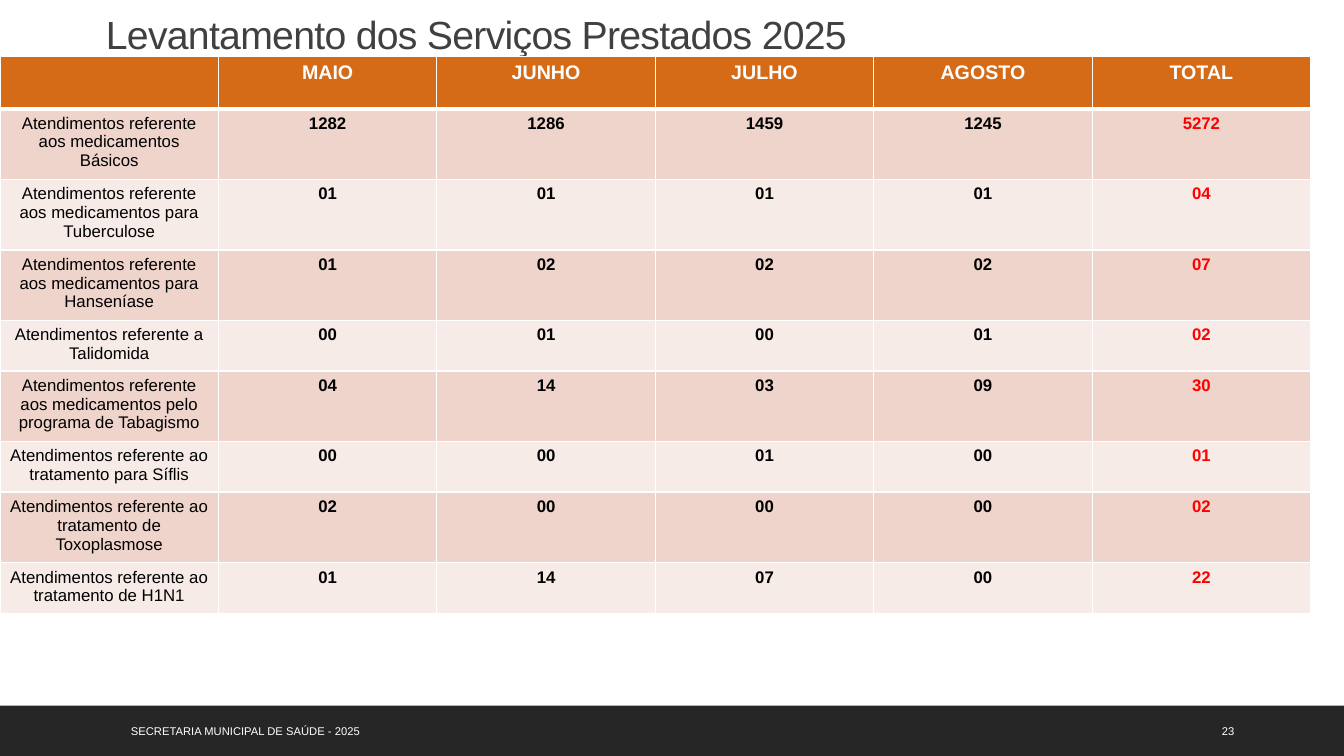
from lxml.etree import SubElement as Sub
from pptx import Presentation
from pptx.dml.color import RGBColor as RGB
from pptx.enum.shapes import MSO_SHAPE as Shape
from pptx.enum.text import MSO_ANCHOR as Anchor, MSO_AUTO_SIZE as Fit, PP_ALIGN as Align
from pptx.oxml import parse_xml
from pptx.oxml.ns import nsdecls, qn
from pptx.util import Inches, Pt

COLORS = {"bar": "262626", "title": "404040", "head": "D56A17", "odd": "EFD4CC",
          "even": "F7EBE8", "text": "000000", "total": "FF0000", "white": "FFFFFF"}
FONT = "Arial"
MONTHS = ["", "MAIO", "JUNHO", "JULHO", "AGOSTO", "TOTAL"]
SERVICES = [
    ("Atendimentos referente aos medicamentos Básicos", "1282", "1286", "1459", "1245", "5272"),
    ("Atendimentos referente aos medicamentos para Tuberculose", "01", "01", "01", "01", "04"),
    ("Atendimentos referente aos medicamentos para Hanseníase", "01", "02", "02", "02", "07"),
    ("Atendimentos referente a Talidomida", "00", "01", "00", "01", "02"),
    ("Atendimentos referente aos medicamentos pelo programa de Tabagismo",
     "04", "14", "03", "09", "30"),
    ("Atendimentos referente ao tratamento para Síflis", "00", "00", "01", "00", "01"),
    ("Atendimentos referente ao tratamento de Toxoplasmose", "02", "00", "00", "00", "02"),
    ("Atendimentos referente ao tratamento de H1N1", "01", "14", "07", "00", "22"),
]
HEIGHTS = [0.52, 0.67, 0.62, 0.65, 0.46, 0.47, 0.48, 0.64, 0.46]


def color(name):
    return RGB.from_string(COLORS[name])


def style(para, size, name, bold=False):
    font = para.font
    font.name, font.size, font.bold = FONT, Pt(size), bold
    font.color.rgb = color(name)


def add_title(slide, left, top, width, height):
    title = slide.shapes.title
    title.left, title.top = Inches(left), Inches(top)
    title.width, title.height = Inches(width), Inches(height)
    frame = title.text_frame
    frame.text = "Levantamento dos Serviços Prestados 2025"
    frame.auto_size = Fit.NONE
    frame.vertical_anchor = Anchor.BOTTOM
    para = frame.paragraphs[0]
    para.alignment, para.line_spacing = Align.LEFT, 0.9
    style(para, 28, "title")
    para.runs[0].font._element.set("spc", "-50")


def add_borders(cell, row):
    """Draw white cell edges, thicker between the header and the body."""
    props = cell._tc.get_or_add_tcPr()
    widths = {"L": 1, "R": 1, "T": 3 if row == 1 else 1, "B": 3 if row == 0 else 1}
    for spot, (side, width) in enumerate(widths.items()):
        line = parse_xml(f'<a:ln{side} {nsdecls("a")} w="{Pt(width)}"/>')
        fill = Sub(line, qn("a:solidFill"))
        Sub(fill, qn("a:srgbClr"), val=COLORS["white"])
        props.insert(spot, line)


def add_services(slide, left, top, width):
    rows = [MONTHS, *SERVICES]
    table = slide.shapes.add_table(len(rows), len(MONTHS), Inches(left), Inches(top),
                                   Inches(width), Inches(sum(HEIGHTS))).table
    for col in table.columns:
        col.width = Inches(width / len(MONTHS))
    for r, (values, height) in enumerate(zip(rows, HEIGHTS)):
        table.rows[r].height = Inches(height)
        for c, value in enumerate(values):
            cell = table.cell(r, c)
            cell.text = value
            cell.fill.solid()
            cell.fill.fore_color.rgb = color("head" if r == 0 else "odd" if r % 2 else "even")
            add_borders(cell, r)
            para = cell.text_frame.paragraphs[0]
            para.alignment = Align.CENTER
            if r == 0:
                style(para, 14, "white", True)
            else:
                style(para, 12, "total" if c == len(MONTHS) - 1 else "text", c > 0)


def add_footer(slide, left, top, width, height):
    bar = slide.shapes.add_shape(Shape.RECTANGLE, Inches(left), Inches(top),
                                 Inches(width), Inches(height))
    bar.shadow.inherit = False
    bar.fill.solid()
    bar.fill.fore_color.rgb = color("bar")
    bar.line.fill.background()
    notes = [("SECRETARIA MUNICIPAL DE SAÚDE - 2025", 1.2, 7.46), ("23", 12.02, 0.85)]
    for text, x, span in notes:
        box = slide.shapes.add_textbox(Inches(left + x), Inches(top + 0.05),
                                       Inches(span), Inches(height - 0.1))
        frame = box.text_frame
        frame.text = text
        frame.word_wrap = True
        frame.vertical_anchor = Anchor.MIDDLE
        style(frame.paragraphs[0], 8, "white")


def main():
    deck = Presentation()
    deck.slide_width, deck.slide_height = Inches(13.33), Inches(7.5)
    slide = deck.slides.add_slide(deck.slide_layouts[5])
    add_footer(slide, 0, 7, 13.33, 0.5)
    add_title(slide, 0.95, 0, 12.38, 0.63)
    add_services(slide, 0, 0.56, 13)
    deck.save("out.pptx")


if __name__ == "__main__":
    main()
